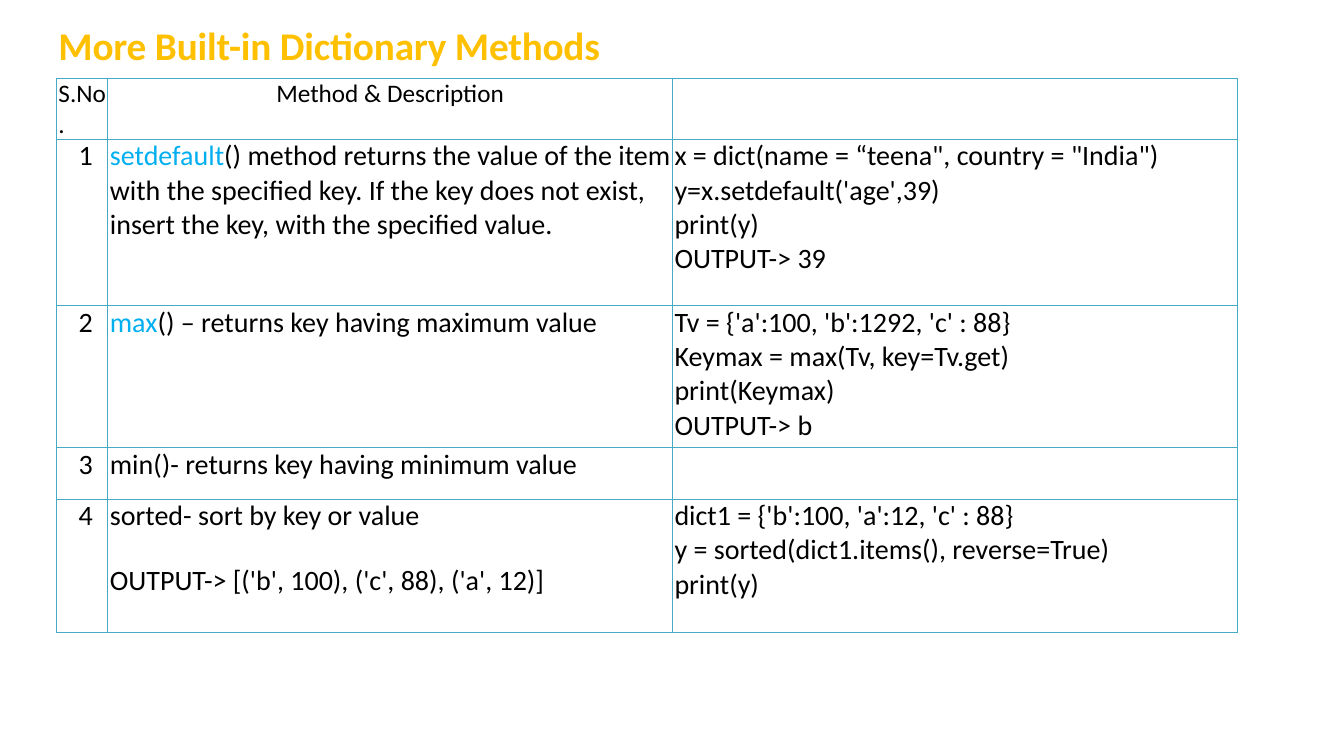
from lxml.etree import SubElement
from pptx import Presentation
from pptx.dml.color import RGBColor
from pptx.enum.text import PP_ALIGN
from pptx.oxml.ns import qn
from pptx.util import Inches, Pt

GOLD = RGBColor(0xFF, 0xC0, 0x00)
SKY = RGBColor(0x00, 0xAF, 0xF0)
BLACK = RGBColor(0x00, 0x00, 0x00)
BORDER = RGBColor(0x46, 0xAA, 0xC5)

COLUMN_WIDTHS = [0.51, 5.6, 5.6]
ROW_HEIGHTS = [0.59, 1.65, 1.41, 0.51, 1.32]
LEFT, TOP = 0.56, 0.78
INDENTS = [0.22, 0.02, 0.02]

# Each row: method name to highlight, description lines, example lines
METHODS = [
    ("setdefault",
     ["setdefault() method returns the value of the item with the specified key. "
      "If the key does not exist, insert the key, with the specified value."],
     ["x = dict(name = “teena\", country = \"India\")", "y=x.setdefault('age',39)",
      "print(y)", "OUTPUT-> 39"]),
    ("max",
     ["max() – returns key having maximum value"],
     ["Tv = {'a':100, 'b':1292, 'c' : 88}", "Keymax = max(Tv, key=Tv.get)",
      "print(Keymax)", "OUTPUT-> b"]),
    ("", ["min()- returns key having minimum value"], []),
    ("",
     ["sorted- sort by key or value", "OUTPUT-> [('b', 100), ('c', 88), ('a', 12)]"],
     ["dict1 = {'b':100, 'a':12, 'c' : 88}", "y = sorted(dict1.items(), reverse=True)",
      "print(y)"]),
]


def style(run, size, color):
    run.font.name = "Calibri"
    run.font.size = Pt(size)
    run.font.color.rgb = color


def prepare_cell(cell):
    """Remove the margins and fill, and draw a thin border on all four sides."""
    cell.margin_left = cell.margin_right = cell.margin_top = cell.margin_bottom = 0
    properties = cell._tc.get_or_add_tcPr()
    for side in ("a:lnL", "a:lnR", "a:lnT", "a:lnB"):
        line = SubElement(properties, qn(side), w=str(Pt(0.75)))
        SubElement(SubElement(line, qn("a:solidFill")), qn("a:srgbClr"), val=str(BORDER))
    cell.fill.background()


deck = Presentation()
deck.slide_width, deck.slide_height = Inches(13.33), Inches(7.5)
slide = deck.slides.add_slide(deck.slide_layouts[6])

heading = slide.shapes.add_textbox(Inches(0.58), Inches(0.21), Inches(7.8), Inches(0.47)).text_frame
heading.word_wrap = True
heading.margin_left = heading.margin_right = heading.margin_top = heading.margin_bottom = 0
heading.text = "More Built-in Dictionary Methods"
title_run = heading.paragraphs[0].runs[0]
style(title_run, 28, GOLD)
title_run.font.bold = True
title_run.font._element.set("spc", "-10")

methods_table = slide.shapes.add_table(
    len(ROW_HEIGHTS), len(COLUMN_WIDTHS), Inches(LEFT), Inches(TOP),
    Inches(sum(COLUMN_WIDTHS)), Inches(sum(ROW_HEIGHTS))).table
methods_table.first_row = methods_table.horz_banding = False
for column, width in zip(methods_table.columns, COLUMN_WIDTHS):
    column.width = Inches(width)
for row, height in zip(methods_table.rows, ROW_HEIGHTS):
    row.height = Inches(height)

contents = [("", [["S.No."], ["Method & Description"], []])]
for number, (method, description, example) in enumerate(METHODS, 1):
    contents.append((method, [[str(number)], description, example]))

for row_index, (method, row_lines) in enumerate(contents):
    size = 20 if row_index else 18
    for column_index, lines in enumerate(row_lines):
        cell = methods_table.cell(row_index, column_index)
        prepare_cell(cell)
        cell.text_frame.text = "\n".join(lines)
        for paragraph in cell.text_frame.paragraphs:
            indent = INDENTS[column_index] if row_index else 0.02
            paragraph._p.get_or_add_pPr().set("marL", str(Inches(indent)))
            if column_index == 1 and method:
                description = paragraph.text
                paragraph.text = method
                paragraph.add_run().text = description.removeprefix(method)
            for run in paragraph.runs:
                style(run, size, BLACK)
            if column_index == 1 and method:
                paragraph.runs[0].font.color.rgb = SKY

header = methods_table.cell(0, 1).text_frame.paragraphs[0]
header.alignment = PP_ALIGN.CENTER
header._p.get_or_add_pPr().set("marL", "0")
sorted_output = methods_table.cell(4, 1).text_frame.paragraphs[1]
sorted_output.space_before = Pt(22)

deck.save("out.pptx")
